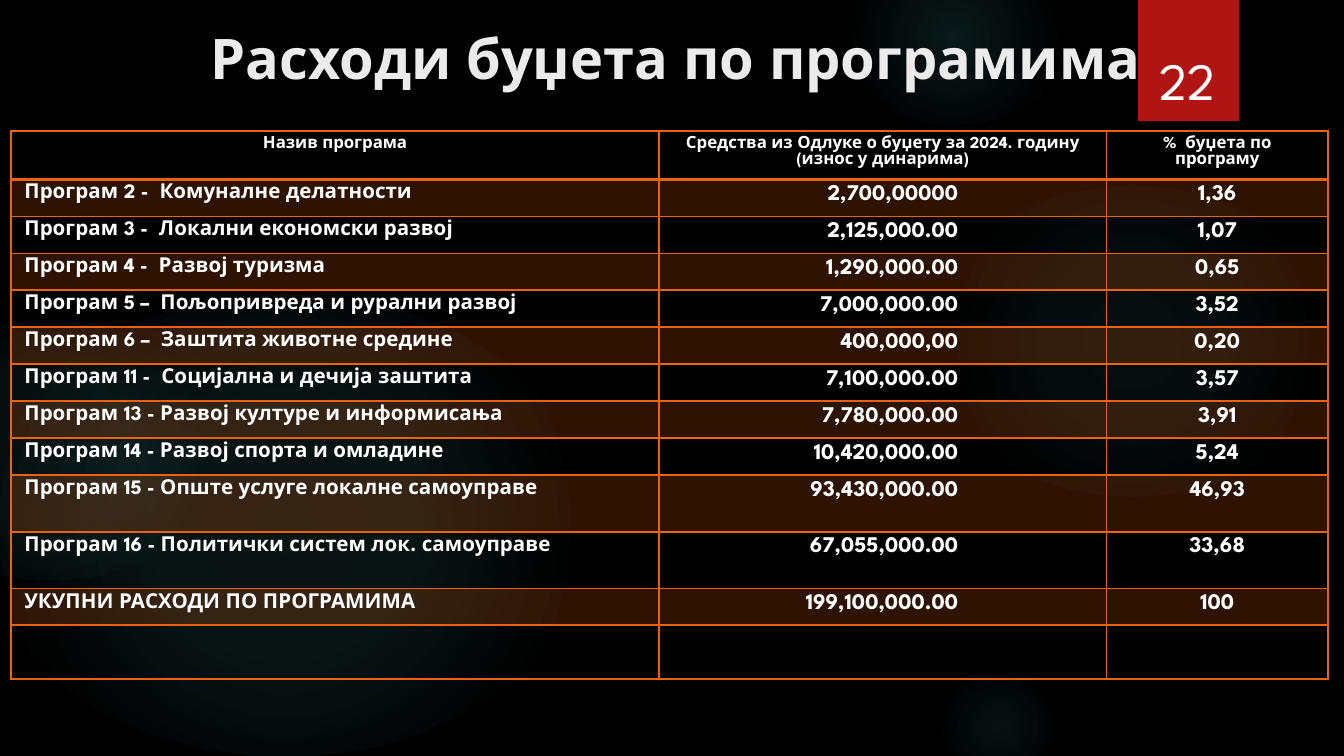
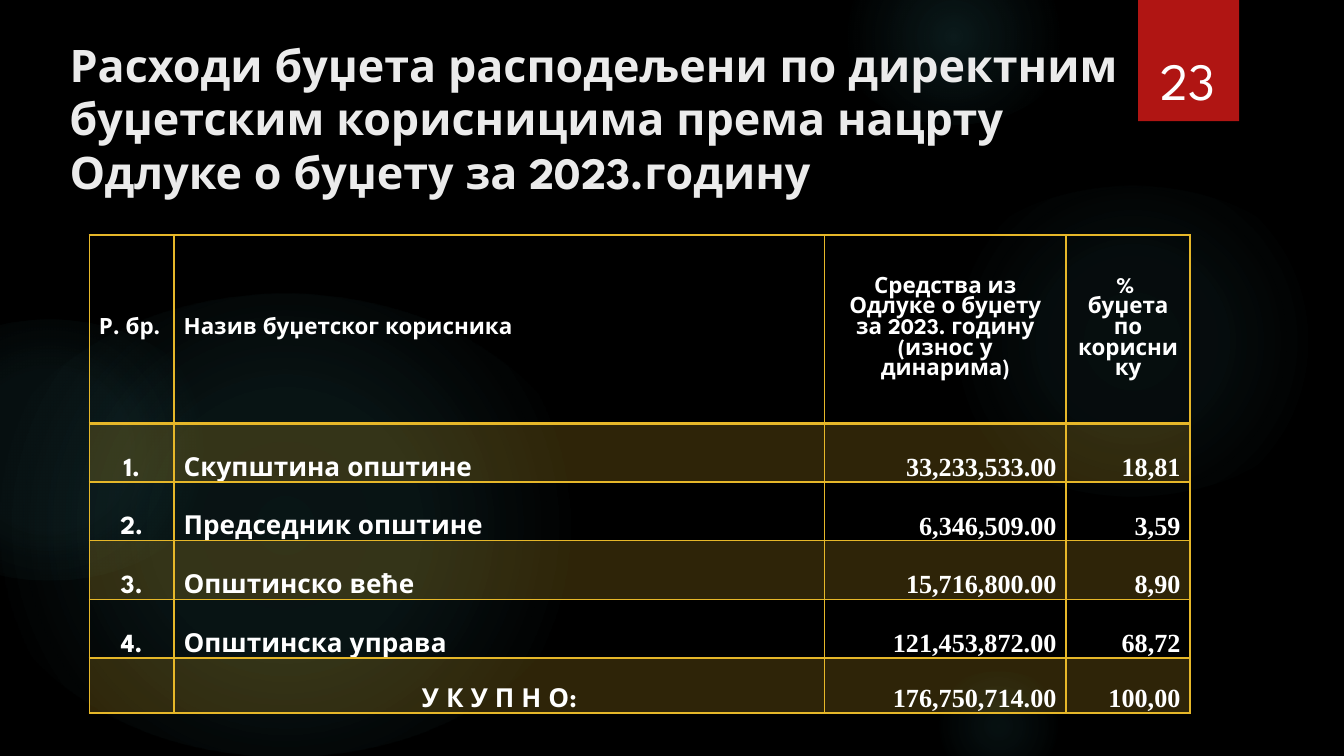
from lxml.etree import SubElement
from pptx import Presentation
from pptx.dml.color import RGBColor
from pptx.enum.shapes import MSO_SHAPE as Preset
from pptx.enum.text import MSO_ANCHOR as Anchor, MSO_AUTO_SIZE as AutoSize, PP_ALIGN as Align
from pptx.oxml import parse_xml
from pptx.oxml.ns import nsdecls, qn
from pptx.util import Cm, Pt

COLORS = {
    "back": "000000", "glow": "50B9C1", "flag": "B01513", "title": "EBEBEB",
    "text": "FFFFFF", "orange": "EA6312", "gold": "E6B729",
}
SANS, SERIF = "League Spartan", "Times New Roman"

# Glows behind the content: box in cm, then (position %, opacity %) stops
GLOWS = [
    ((17.5, 3.51, 7.82, 5.87), [(0, 7), (36, 6), (69, 0)]),
    ((15.8, -0.97, 4.45, 3.33), [(0, 14), (36, 7), (73, 0)]),
    ((17.5, 12.7, 2.74, 2.06), [(0, 9), (36, 5), (66, 0)]),
    ((-0.43, 5.56, 11.63, 8.74), [(0, 11), (36, 10), (75, 0)]),
    ((-2.34, 6.05, 6.55, 4.93), [(0, 8), (36, 8), (72, 0)]),
]
FLAG_BOX = (21.51, 0, 1.91, 2.29)

PROGRAMS = [
    ("Назив програма", "Средства из Одлуке о буџету за 2024. годину (износ у динарима)",
     "%  буџета по програму"),
    ("Програм 2 -  Комуналне делатности", "2,700,00000", "1,36"),
    ("Програм 3 -  Локални економски развој", "2,125,000.00", "1,07"),
    ("Програм 4 -  Развој туризма", "1,290,000.00", "0,65"),
    ("Програм 5 –  Пољопривреда и рурални развој", "7,000,000.00", "3,52"),
    ("Програм 6 –  Заштита животне средине", "400,000,00", "0,20"),
    ("Програм 11 -  Социјална и дечија заштита", "7,100,000.00", "3,57"),
    ("Програм 13 - Развој културе и информисања", "7,780,000.00", "3,91"),
    ("Програм 14 - Развој спорта и омладине", "10,420,000.00", "5,24"),
    ("Програм 15 - Опште услуге локалне самоуправе", "93,430,000.00", "46,93"),
    ("Програм 16 - Политички систем лок. самоуправе", "67,055,000.00", "33,68"),
    ("УКУПНИ РАСХОДИ ПО ПРОГРАМИМА", "199,100,000.00", "100"),
    ("", "", ""),
]
USERS = [
    ("Р. бр.", "Назив буџетског корисника",
     "Средства из Одлуке о буџету за 2023. годину (износ у динарима)",
     "%  буџета по кориснику"),
    ("1.", "Скупштина општине", "33,233,533.00", "18,81"),
    ("2.", "Председник општине", "6,346,509.00", "3,59"),
    ("3.", "Општинско веће", "15,716,800.00", "8,90"),
    ("4.", "Општинска управа", "121,453,872.00", "68,72"),
    ("", "У К У П Н О:", "176,750,714.00", "100,00"),
]


def rgb(name):
    return RGBColor.from_string(COLORS[name])


def cm(box):
    return [Cm(length) for length in box]


def assign(target, values):
    for name, value in values.items():
        setattr(target, name, value)


def style_text(paragraph, color, size, font=SANS, bold=True, align=Align.LEFT):
    paragraph.alignment = align
    for run in paragraph.runs:
        assign(run.font, {"name": font, "size": Pt(size), "bold": bold})
        run.font.color.rgb = rgb(color)


def add_plain(slide, preset, box):
    shape = slide.shapes.add_shape(preset, *cm(box))
    shape.shadow.inherit = False
    shape.line.fill.background()
    return shape


# Backdrop: soft round glows
def add_glows(slide):
    for box, stops in GLOWS:
        glow = add_plain(slide, Preset.OVAL, box)
        glow.fill.background()
        stop_xml = "".join(
            f'<a:gs pos="{pos * 1000}"><a:srgbClr val="{COLORS["glow"]}">'
            f'<a:alpha val="{alpha * 1000}"/></a:srgbClr></a:gs>' for pos, alpha in stops)
        gradient = parse_xml(
            f'<a:gradFill {nsdecls("a")} rotWithShape="1"><a:gsLst>{stop_xml}</a:gsLst>'
            '<a:path path="circle"><a:fillToRect l="50000" t="50000" r="50000" b="50000"/>'
            '</a:path></a:gradFill>')
        properties = glow.element.spPr
        properties.replace(properties.find(qn("a:noFill")), gradient)


# Red flag with the page number
def add_flag(slide, box, number):
    flag = add_plain(slide, Preset.RECTANGLE, box)
    flag.fill.solid()
    flag.fill.fore_color.rgb = rgb("flag")
    effects = flag.element.spPr.find(qn("a:effectLst"))
    effects.append(parse_xml(
        f'<a:outerShdw {nsdecls("a")} blurRad="38100" dist="25400" dir="5400000" '
        'rotWithShape="0"><a:srgbClr val="000000"><a:alpha val="45000"/></a:srgbClr>'
        '</a:outerShdw>'))
    left, top, _, _ = box
    label = slide.shapes.add_textbox(*cm((left + 0.06, top + 0.62, 1.75, 1.6)))
    frame = label.text_frame
    assign(frame, {"word_wrap": True, "vertical_anchor": Anchor.BOTTOM, "text": number})
    style_text(frame.paragraphs[0], "text", 28, bold=False, align=Align.CENTER)


def add_title(slide, box, text, size):
    title = slide.shapes.title
    assign(title, dict(zip(("left", "top", "width", "height"), cm(box))))
    frame = title.text_frame
    assign(frame, {"text": text, "word_wrap": True, "auto_size": AutoSize.NONE,
                   "vertical_anchor": Anchor.TOP})
    style_text(frame.paragraphs[0], "title", size)
    slide.shapes.element.append(title.element)


def set_borders(cell, color, top, bottom):
    properties = cell._tc.get_or_add_tcPr()
    widths = {"a:lnL": 1, "a:lnR": 1, "a:lnT": top, "a:lnB": bottom}
    for position, (tag, width) in enumerate(widths.items()):
        line = parse_xml(
            f'<{tag} {nsdecls("a")} w="{Pt(width)}"><a:solidFill>'
            f'<a:srgbClr val="{COLORS[color]}"/></a:solidFill></{tag}>')
        properties.insert(position, line)


def tint(cell, color):
    cell.fill.solid()
    cell.fill.fore_color.rgb = rgb(color)
    SubElement(next(cell._tc.tcPr.iter(qn("a:srgbClr"))), qn("a:alpha"), val="20000")


# Table: every second row tinted, heavier rule under the header
def add_budget_table(slide, corner, widths, heights, rows, color, cell_format):
    box = (*corner, sum(widths), sum(heights))
    table = slide.shapes.add_table(len(rows), len(widths), *cm(box)).table
    assign(table, {"first_row": False, "horz_banding": False})
    for column, width in zip(table.columns, widths):
        column.width = Cm(width)
    for r, (row, height) in enumerate(zip(rows, heights)):
        table.rows[r].height = Cm(height)
        for c, text in enumerate(row):
            cell = table.cell(r, c)
            cell.text = text
            cell_values, text_values = cell_format(r, c)
            assign(cell, cell_values)
            style_text(cell.text_frame.paragraphs[0], "text", **text_values)
            if r % 2:
                tint(cell, color)
            else:
                cell.fill.background()
            set_borders(cell, color, 2 if r == 1 else 1, 2 if r == 0 else 1)


def program_format(r, c):
    margins = {"margin_left": Cm(0.25), "margin_right": Cm(0.25),
               "margin_top": Cm(0.1), "margin_bottom": Cm(0.1)}
    if r == 0:
        return margins, {"size": 9, "align": Align.CENTER}
    if c == 1:  # amounts line up on their last digit
        margins["margin_right"] = Cm(2.8)
    align = (Align.LEFT, Align.RIGHT, Align.CENTER)[c]
    return margins, {"size": 12 if c else 11, "align": align}


def user_format(r, c):
    values = {"margin_left": Cm(0.18), "margin_right": Cm(0.18), "margin_top": 0,
              "margin_bottom": 0, "vertical_anchor": Anchor.BOTTOM if r else Anchor.MIDDLE}
    if r == 0:
        return values, {"size": 12, "align": Align.CENTER if c > 1 else Align.LEFT}
    if c > 1:
        return values, {"size": 14, "align": Align.RIGHT, "font": SERIF}
    centred = c == 0 or r == len(USERS) - 1
    return values, {"size": 14, "align": Align.CENTER if centred else Align.LEFT}


def add_page(deck, number):
    slide = deck.slides.add_slide(deck.slide_layouts[5])
    add_glows(slide)
    add_flag(slide, FLAG_BOX, number)
    return slide


def build_programs(deck):
    slide = add_page(deck, "22")
    add_title(slide, (3.72, 0.32, 21.64, 1.63), "Расходи буџета по програмима", 30)
    heights = [0.91] + [0.7] * 8 + [1.07] * 2 + [0.69, 1.02]
    add_budget_table(slide, (0.21, 2.48), (12.24, 8.46, 4.19), heights,
                     PROGRAMS, "orange", program_format)


def build_users(deck):
    slide = add_page(deck, "23")
    add_title(slide, (1.06, 0.58, 22.86, 2.39),
              "Расходи буџета расподељени по директним буџетским корисницима према нацрту"
              "\vОдлуке о буџету за 2023.годину", 24)
    heights = [3.56] + [1.11] * 4 + [1.04]
    add_budget_table(slide, (1.69, 4.44), (1.6, 12.29, 4.57, 2.34), heights,
                     USERS, "gold", user_format)


def main():
    deck = Presentation()
    assign(deck, {"slide_width": Cm(25.4), "slide_height": Cm(14.29)})
    backdrop = deck.slide_master.background.fill
    backdrop.solid()
    backdrop.fore_color.rgb = rgb("back")
    build_programs(deck)
    build_users(deck)
    deck.save("out.pptx")


if __name__ == "__main__":
    main()
